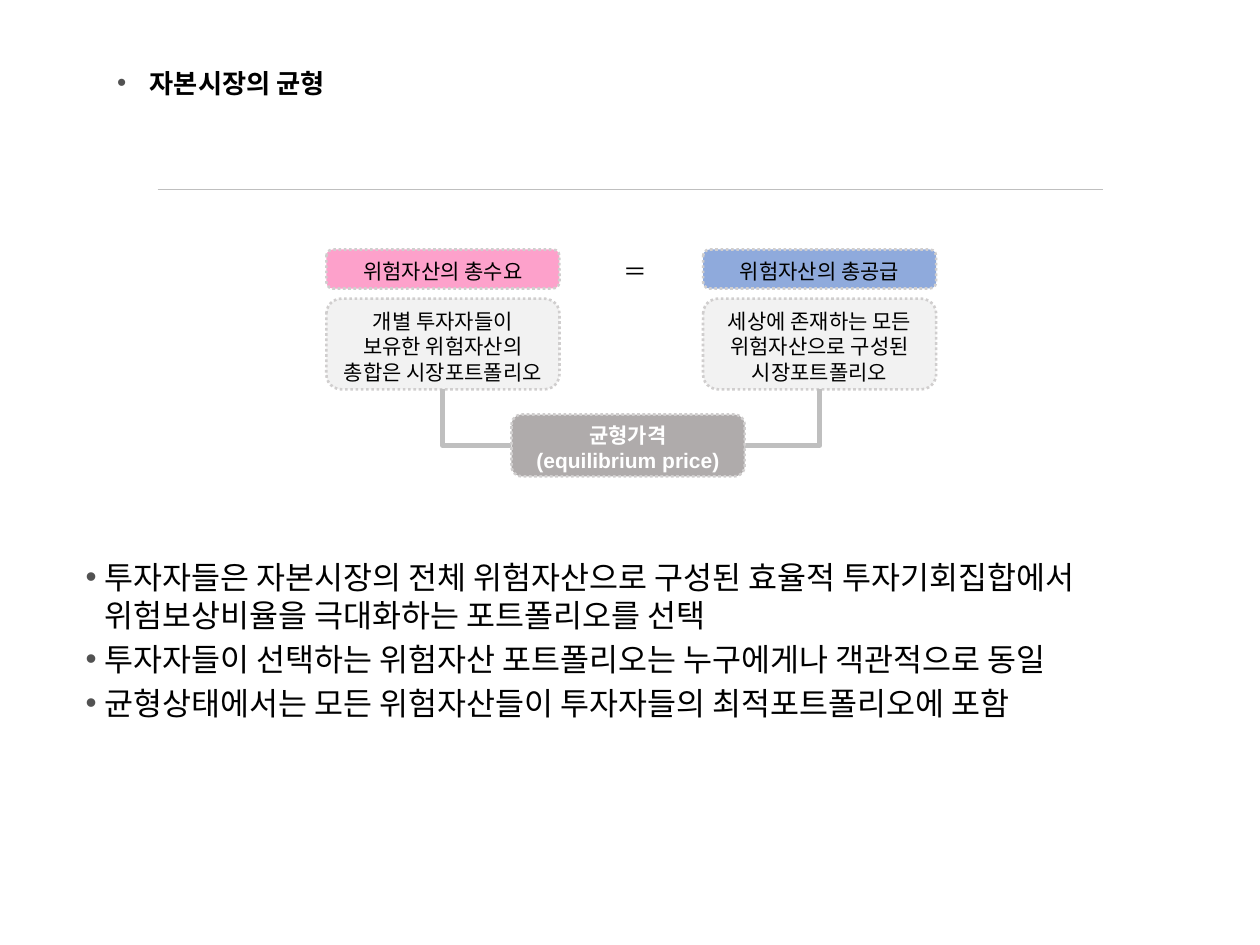
import pptx
import pptx.dml.color
import pptx.enum.dml
import pptx.enum.shapes
import pptx.enum.text
import pptx.oxml.ns
import pptx.util
from lxml import etree

COLORS = {
    "text": "000000", "light text": "FFFFFF", "bullet": "525252",
    "demand": "FDA1CB", "supply": "8FAADC", "detail": "F2F2F2",
    "price": "AFABAB", "outline": "D0CECE", "line": "BFBFBF",
}
SLIDE_WIDTH, SLIDE_HEIGHT = 10, 7.5
BOX_WIDTH = 1.85
COLUMNS = {"demand": 2.59, "price": 4.06, "supply": 5.58}
# Top and height of each row of boxes
ROWS = {"header": (1.98, 0.31), "detail": (2.37, 0.72), "price": (3.29, 0.49)}

HEADING = "자본시장의 균형"
SIDES = {
    "demand": ("위험자산의 총수요",
               "개별 투자자들이 보유한 위험자산의 총합은 시장포트폴리오"),
    "supply": ("위험자산의 총공급",
               "세상에 존재하는 모든 위험자산으로 구성된 시장포트폴리오"),
}
PRICE = "균형가격\v(equilibrium price)"
CONCLUSIONS = [
    "투자자들은 자본시장의 전체 위험자산으로 구성된 효율적 투자기회집합에서 "
    "위험보상비율을 극대화하는 포트폴리오를 선택",
    "투자자들이 선택하는 위험자산 포트폴리오는 누구에게나 객관적으로 동일",
    "균형상태에서는 모든 위험자산들이 투자자들의 최적포트폴리오에 포함",
]


def rgb(name):
    return pptx.dml.color.RGBColor.from_string(COLORS[name])


def inches(*lengths):
    return [pptx.util.Inches(length) for length in lengths]


def set_attributes(target, values):
    for name, value in values.items():
        setattr(target, name, value)


def format_text(paragraph, size, color="text", bold=False):
    set_attributes(paragraph.font, {
        "name": "Arial", "size": pptx.util.Pt(size), "bold": bold})
    paragraph.font.color.rgb = rgb(color)
    for run in paragraph.runs:
        set_attributes(run.font, {
            "name": "Arial", "size": pptx.util.Pt(size), "bold": bold})
        run.font.color.rgb = rgb(color)


def add_bullet(paragraph, indent):
    properties = paragraph._p.get_or_add_pPr()
    hanging = pptx.util.Inches(indent)
    properties.set("marL", str(hanging))
    properties.set("indent", str(-hanging))
    qualified = pptx.oxml.ns.qn
    bullet_color = etree.SubElement(properties, qualified("a:buClr"))
    etree.SubElement(bullet_color, qualified("a:srgbClr"), val=COLORS["bullet"])
    etree.SubElement(properties, qualified("a:buFont"), typeface="Arial")
    etree.SubElement(properties, qualified("a:buChar"), char="•")


def fill_placeholder(placeholder, place, texts, size, indent, bold=False):
    """Move a placeholder and write its texts as a bulleted list."""
    names = ("left", "top", "width", "height")
    set_attributes(placeholder, dict(zip(names, inches(*place))))
    frame = placeholder.text_frame
    set_attributes(frame, {
        "word_wrap": True,
        "auto_size": pptx.enum.text.MSO_AUTO_SIZE.NONE,
        "vertical_anchor": pptx.enum.text.MSO_ANCHOR.TOP,
        "text": "\n".join(texts),
    })
    for index, paragraph in enumerate(frame.paragraphs):
        paragraph.alignment = pptx.enum.text.PP_ALIGN.LEFT
        paragraph.space_before = pptx.util.Pt(0.2 * size if index else 0)
        add_bullet(paragraph, indent)
        format_text(paragraph, size, bold=bold)


def add_box(slide, column, row, text, fill, text_color="text", bold=False):
    top, height = ROWS[row]
    box = slide.shapes.add_shape(
        pptx.enum.shapes.MSO_SHAPE.ROUNDED_RECTANGLE,
        *inches(COLUMNS[column], top, BOX_WIDTH, height))
    box.shadow.inherit = False
    box.fill.solid()
    box.fill.fore_color.rgb = rgb(fill)
    box.line.color.rgb = rgb("outline")
    set_attributes(box.line, {
        "width": pptx.util.Pt(1.5),
        "dash_style": pptx.enum.dml.MSO_LINE.ROUND_DOT})
    set_attributes(box.text_frame, {
        "word_wrap": True,
        "margin_top": pptx.util.Inches(0.04),
        "margin_bottom": 0,
        "vertical_anchor": pptx.enum.text.MSO_ANCHOR.MIDDLE,
        "text": text,
    })
    paragraph = box.text_frame.paragraphs[0]
    paragraph.alignment = pptx.enum.text.PP_ALIGN.CENTER
    format_text(paragraph, 12, text_color, bold)


def add_equals_sign(slide):
    label = slide.shapes.add_textbox(*inches(4.85, 1.99, 0.39, 0.33))
    label.text_frame.word_wrap = False
    label.text_frame.text = "＝"
    format_text(label.text_frame.paragraphs[0], 13.5)


def add_line(slide, start, end, width, bent=False):
    """Add a straight line, or one that runs across and then turns once."""
    kinds = pptx.enum.shapes.MSO_CONNECTOR
    connector = slide.shapes.add_connector(
        kinds.ELBOW if bent else kinds.STRAIGHT, *inches(*start, *end))
    connector.line.color.rgb = rgb("line")
    connector.line.width = pptx.util.Pt(width)
    properties = connector._element.spPr
    etree.SubElement(properties, pptx.oxml.ns.qn("a:effectLst"))
    if bent:
        geometry = properties.find(pptx.oxml.ns.qn("a:prstGeom"))
        geometry.set("prst", "bentConnector2")


def add_equilibrium_diagram(slide):
    detail_bottom = sum(ROWS["detail"])
    price_middle = ROWS["price"][0] + ROWS["price"][1] / 2
    price_edges = {"demand": COLUMNS["price"],
                   "supply": COLUMNS["price"] + BOX_WIDTH}
    for side, (header, detail) in SIDES.items():
        add_box(slide, side, "header", header, side)
        add_box(slide, side, "detail", detail, "detail")
        side_center = COLUMNS[side] + BOX_WIDTH / 2
        add_line(slide, (price_edges[side], price_middle),
                 (side_center, detail_bottom), 3, bent=True)
    add_equals_sign(slide)
    add_box(slide, "price", "price", PRICE, "price", "light text", bold=True)


def main():
    presentation = pptx.Presentation()
    presentation.slide_width, presentation.slide_height = inches(
        SLIDE_WIDTH, SLIDE_HEIGHT)
    slide = presentation.slides.add_slide(presentation.slide_layouts[1])
    title, body = slide.placeholders
    fill_placeholder(title, (0.83, 0.48, 8.69, 0.63), [HEADING],
                     15, 0.26, bold=True)
    fill_placeholder(body, (0.58, 4.38, 8.53, 1.87), CONCLUSIONS, 18, 0.15)
    add_line(slide, (SLIDE_WIDTH / 8, SLIDE_HEIGHT / 5),
             (SLIDE_WIDTH * 7 / 8, SLIDE_HEIGHT / 5), 0.5)
    add_equilibrium_diagram(slide)
    presentation.save("out.pptx")


if __name__ == "__main__":
    main()
